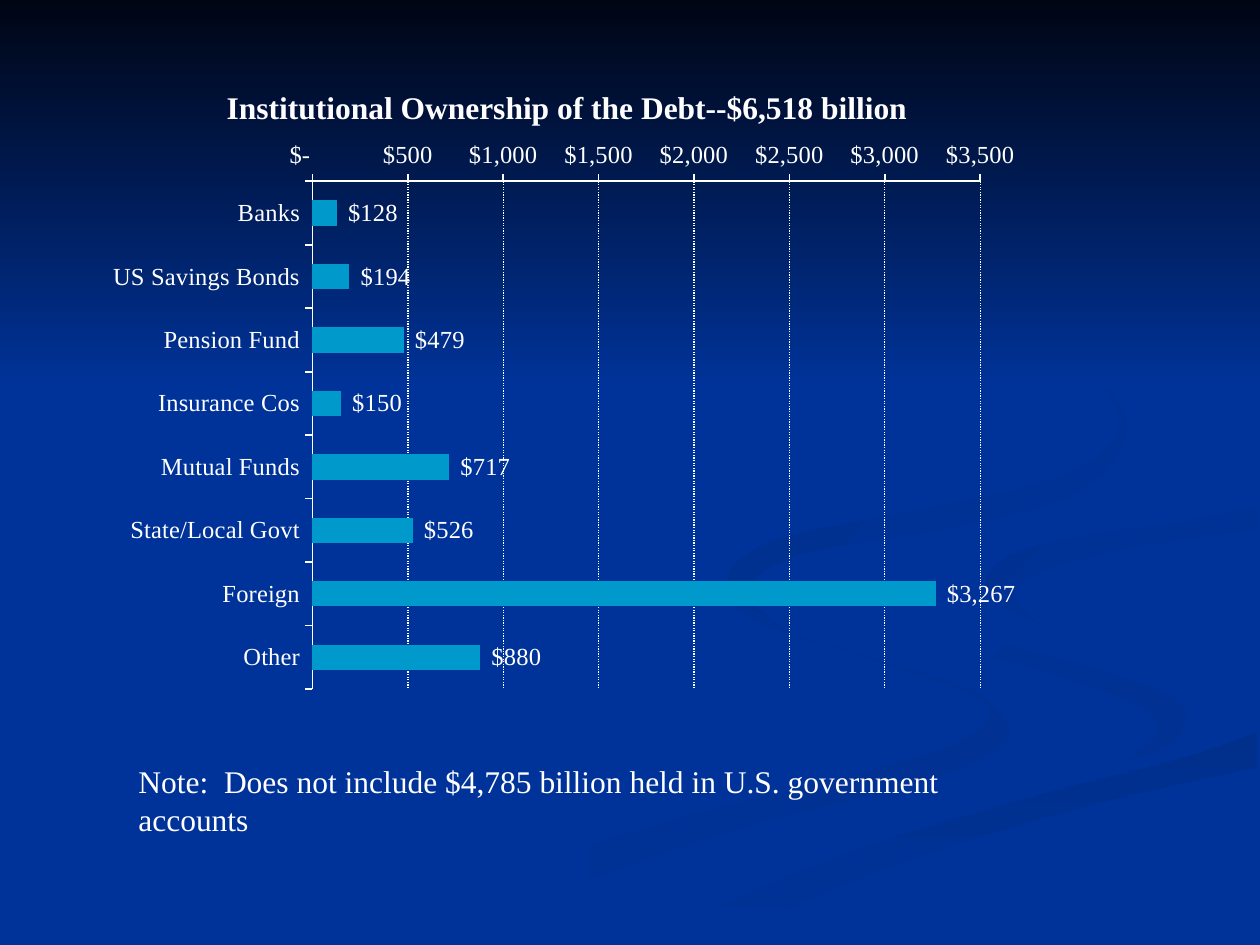
"""Build a slide with a bar chart of the institutional ownership of the debt."""
from itertools import chain

from lxml.etree import SubElement
from pptx import Presentation
from pptx.chart.data import CategoryChartData
from pptx.dml.color import RGBColor
from pptx.enum.chart import XL_CHART_TYPE, XL_LABEL_POSITION, XL_TICK_MARK
from pptx.enum.dml import MSO_LINE
from pptx.enum.shapes import MSO_SHAPE
from pptx.oxml.ns import qn
from pptx.util import Inches, Pt

BLUE = RGBColor(0x00, 0x33, 0x99)
NIGHT = RGBColor(0x00, 0x05, 0x14)
DARK_SHADE = RGBColor(0x00, 0x2F, 0x8C)
MID_SHADE = RGBColor(0x00, 0x30, 0x91)
SOFT_SHADE = RGBColor(0x00, 0x31, 0x93)
CYAN = RGBColor(0x00, 0x99, 0xCC)
WHITE = RGBColor(0xFF, 0xFF, 0xFF)
FONT = "Times New Roman"
DOLLARS = '_("$"* #,##0_);_("$"* \\(#,##0\\);_("$"* "-"??_);_(@_)'

CHART_BOX = (0.75, 0.5, 7.5, 5.08)
PLOT_BOX = (2.48, 1.44, 5.3, 4.03)
HOLDINGS = {
    "Banks": 128, "US Savings Bonds": 194, "Pension Fund": 479,
    "Insurance Cos": 150, "Mutual Funds": 717, "State/Local Govt": 526,
    "Foreign": 3267, "Other": 880,
}

STEPS = 5
BEND_EDGE = [(7.24, 4.64), (7.45, 4.9), (7.92, 5.09), (8.7, 5.3), (9.3, 5.53), (9.43, 5.7)]
LOWER_EDGE = [(5.19, 7.47), (5.99, 7.06), (6.96, 6.69), (8.31, 6.29), (9.36, 6.02), (9.98, 5.81)]
UPPER_EDGE = [(7.81, 4.6), (7.99, 4.42), (8.49, 4.27), (9.33, 4.15), (9.98, 4.02)]

LEFT_RIBBON = [
    [(7.81, 5.53), (7.45, 5.38), (6.82, 5.19), (6.14, 4.96), (5.75, 4.59)],
    [(5.7, 4.68), (6.02, 4.95), (6.79, 5.19), (7.62, 5.47), (7.86, 5.66),
     (7.59, 5.9), (6.84, 6.13), (5.39, 6.49), (4.17, 6.9), (3, 7.49)],
    [(3.61, 7.49), (4.66, 7), (5.94, 6.56), (7.4, 6.18), (7.95, 5.92), (7.99, 5.73), (7.81, 5.53)],
]
BEND_RIBBON = [
    BEND_EDGE,
    [(9.43, 5.7), (9.32, 5.89), (8.94, 6.05)],
    [(8.94, 6.05), (9.18, 5.81), (9.07, 5.62), (8.38, 5.36), (7.66, 5.12), (7.24, 4.64)],
]
LOWER_RIBBON = [
    LOWER_EDGE,
    [(9.98, 6.09), (8.61, 6.4), (7.22, 6.82), (6.3, 7.19), (5.71, 7.49)],
    [(5.71, 7.49), (5.03, 7.49)],
]
MIDDLE_RIBBON = [
    BEND_EDGE,
    [(9.43, 5.7), (9.26, 5.93), (8.69, 6.11), (7.43, 6.43), (6.19, 6.84), (4.77, 7.49)],
    LOWER_EDGE,
    [(9.98, 5.38), (9.04, 5.19), (8.04, 4.85), (7.81, 4.6)],
    UPPER_EDGE,
    [(9.98, 3.87), (8.74, 4.08), (7.55, 4.32), (7.24, 4.64)],
]
RIGHT_RIBBON = [
    UPPER_EDGE,
    [(9.98, 4.2), (8.96, 4.35), (8.28, 4.53), (8.05, 4.72), (8.26, 4.96)],
    [(8.26, 4.96), (7.91, 4.78), (7.81, 4.6)],
]
TOP_RIBBON = [
    [(7.62, 2.33), (8.21, 2.61), (8.73, 2.99), (8.94, 3.44), (8.55, 3.91), (7.64, 4.17), (6.83, 4.3)],
    [(6.83, 4.3), (6.24, 4.44), (5.93, 4.7), (6.22, 5)],
    [(6.22, 5), (5.77, 4.62), (6.15, 4.29), (7.33, 4.04), (8.42, 3.78),
     (8.89, 3.35), (8.46, 2.79), (7.62, 2.33)],
]
RIBBONS = [
    (LEFT_RIBBON, BLUE, SOFT_SHADE, 0),
    (BEND_RIBBON, BLUE, SOFT_SHADE, 45),
    (LOWER_RIBBON, DARK_SHADE, BLUE, 90),
    (MIDDLE_RIBBON, BLUE, BLUE, 0),
    (RIGHT_RIBBON, MID_SHADE, BLUE, 45),
    (TOP_RIBBON, DARK_SHADE, BLUE, 45),
]


def smooth(knots):
    """Return points on a Catmull-Rom curve through the knots."""
    padded = [knots[0], *knots, knots[-1]]
    curve = []
    for a, b, c, d in zip(padded, padded[1:], padded[2:], padded[3:]):
        for step in range(STEPS):
            t = step / STEPS
            curve.append(tuple(
                q + t / 2 * (r - p + t * (2 * p - 5 * q + 4 * r - u + t * (3 * (q - r) + u - p)))
                for p, q, r, u in zip(a, b, c, d)))
    return curve + [knots[-1]]


def paint(sp, start, end, angle):
    """Fill a shape with one colour or a clockwise-angled gradient."""
    sp.shadow.inherit = False
    sp.line.fill.background()
    if start == end:
        sp.fill.solid()
        sp.fill.fore_color.rgb = start
        return
    sp.fill.gradient()
    sp.fill.gradient_angle = (360 - angle) % 360
    for stop, color in zip(sp.fill.gradient_stops, (start, end)):
        stop.color.rgb = color


def add_ribbon(s, edges, start, end, angle):
    """Draw a closed outline whose edges are smooth curves."""
    outline = chain.from_iterable(smooth(edge) for edge in edges)
    first, *rest = [(Inches(x), Inches(y)) for x, y in outline]
    builder = s.shapes.build_freeform(*first)
    builder.add_line_segments(rest, close=True)
    paint(builder.convert_to_shape(), start, end, angle)


def set_font(font, size, bold=False):
    """Apply the slide's typeface and colour at a given size."""
    font.name, font.size, font.bold = FONT, Pt(size), bold
    font.color.rgb = WHITE


def place_plot(chart):
    """Set the inner plot area as fractions of the chart."""
    left, top, width, height = CHART_BOX
    x, y, w, h = PLOT_BOX
    settings = {
        "layoutTarget": "inner", "xMode": "edge", "yMode": "edge",
        "x": (x - left) / width, "y": (y - top) / height, "w": w / width, "h": h / height,
    }
    area = chart.plots[0]._element.getparent()
    for old in area.findall(qn("c:layout")):
        area.remove(old)
    layout = SubElement(area, qn("c:layout"))
    area.insert(0, layout)
    manual = SubElement(layout, qn("c:manualLayout"))
    for name, value in settings.items():
        SubElement(manual, qn(f"c:{name}")).set("val", str(value))


def style_axes(chart):
    """Style both axes, the dollar scale and its gridlines."""
    for axis in (chart.category_axis, chart.value_axis):
        set_font(axis.tick_labels.font, 14)
        axis.major_tick_mark = XL_TICK_MARK.OUTSIDE
        axis.minor_tick_mark = XL_TICK_MARK.NONE
        axis.format.line.color.rgb = WHITE
        axis.format.line.width = Pt(1)
    chart.category_axis.reverse_order = True
    scale = chart.value_axis
    scale.minimum_scale, scale.maximum_scale, scale.major_unit = 0, 3500, 500
    scale.tick_labels.number_format = DOLLARS
    scale.tick_labels.number_format_is_linked = False
    grid = scale.major_gridlines.format.line
    grid.color.rgb, grid.width, grid.dash_style = WHITE, Pt(0.75), MSO_LINE.ROUND_DOT


def style_bars(plot):
    """Colour the bars and label them with their values."""
    plot.gap_width, plot.vary_by_categories = 150, False
    fill = plot.series[0].format.fill
    fill.solid()
    fill.fore_color.rgb = CYAN
    plot.has_data_labels = True
    labels = plot.data_labels
    set_font(labels.font, 14)
    labels.show_value, labels.position = True, XL_LABEL_POSITION.OUTSIDE_END
    labels.number_format, labels.number_format_is_linked = DOLLARS, False


def add_ownership_chart(s, title):
    """Add the bar chart of holdings with its title."""
    data = CategoryChartData(number_format=DOLLARS)
    data.categories = list(HOLDINGS)
    data.add_series("Series 1", list(HOLDINGS.values()))
    box = [Inches(length) for length in CHART_BOX]
    chart = s.shapes.add_chart(XL_CHART_TYPE.BAR_CLUSTERED, *box, data).chart
    set_font(chart.font, 10)
    chart.has_legend = False
    p = chart.chart_title.text_frame.paragraphs[0]
    p.text = title
    set_font(p.font, 18, bold=True)
    place_plot(chart)
    style_axes(chart)
    style_bars(chart.plots[0])


def add_note(s, text):
    """Add the note below the chart."""
    tf = s.shapes.add_textbox(Inches(1), Inches(6), Inches(7.29), Inches(0.4)).text_frame
    tf.word_wrap = True
    p = tf.paragraphs[0]
    p.text = text
    set_font(p.font, 18)


def main():
    """Build and save the slide."""
    prs = Presentation()
    prs.slide_width, prs.slide_height = Inches(10), Inches(7.5)
    s = prs.slides.add_slide(prs.slide_layouts[6])
    s.background.fill.solid()
    s.background.fill.fore_color.rgb = BLUE
    for ribbon in RIBBONS:
        add_ribbon(s, *ribbon)
    sky = s.shapes.add_shape(MSO_SHAPE.RECTANGLE, 0, 0, prs.slide_width, Inches(3.08))
    paint(sky, NIGHT, BLUE, 90)
    add_ownership_chart(s, "Institutional Ownership of the Debt--$6,518 billion")
    add_note(s, "Note:  Does not include $4,785 billion held in U.S. government accounts")
    prs.save("out.pptx")


if __name__ == "__main__":
    main()
